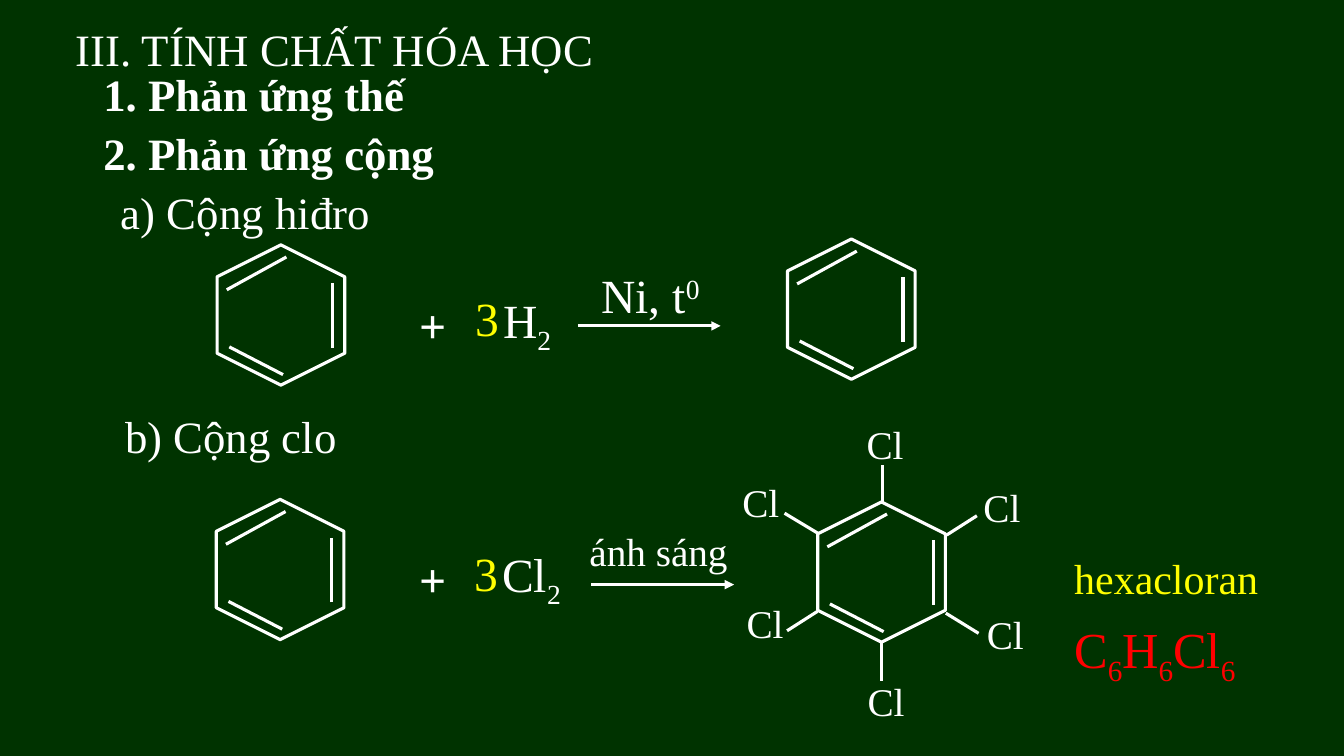
"""Build a slide on the addition reactions of benzene."""
from lxml import etree
from pptx import Presentation, util as u
from pptx.dml.color import RGBColor
from pptx.enum import shapes, text
from pptx.oxml import ns

GREEN = RGBColor(0x00, 0x33, 0x00)
WHITE = RGBColor(0xFF, 0xFF, 0xFF)
YELLOW = RGBColor(0xFF, 0xFF, 0x00)
RED = RGBColor(0xFF, 0x00, 0x00)
FONT = "Times New Roman"

prs = Presentation()
prs.slide_width, prs.slide_height = u.Inches(13.333), u.Inches(7.5)
CELL = prs.slide_width / 160
s = prs.slides.add_slide(prs.slide_layouts[1])
s.background.fill.solid()
s.background.fill.fore_color.rgb = GREEN


def grid(*cells):
    return [round(n * CELL) for n in cells]


def add_line(x1, y1, x2, y2):
    line = s.shapes.add_connector(shapes.MSO_CONNECTOR.STRAIGHT, *grid(x1, y1, x2, y2))
    line.line.color.rgb = WHITE
    line.line.width = u.Pt(2.25)
    etree.SubElement(line._element.spPr, ns.qn("a:effectLst"))
    return line


title, body = s.shapes.title, s.placeholders[1]
title.left, title.top, title.width, title.height = grid(7.8, -1.2, 66, 9.7)
body.left, body.top, body.width, body.height = grid(11.1, 7.3, 110, 22)
title.text_frame.text = "III. TÍNH CHẤT HÓA HỌC"
body.text_frame.text = "1. Phản ứng thế\n2. Phản ứng cộng\na) Cộng hiđro"
for sp in (title, body):
    tf = sp.text_frame
    tf.word_wrap = True
    tf.auto_size = text.MSO_AUTO_SIZE.NONE
    tf.vertical_anchor = text.MSO_ANCHOR.TOP
    for p in tf.paragraphs:
        p.alignment = text.PP_ALIGN.LEFT
        p.font.size, p.font.name, p.font.color.rgb = u.Pt(32), FONT, WHITE
title.text_frame.paragraphs[0].line_spacing = 1.5
for i, p in enumerate(body.text_frame.paragraphs):
    p.space_before = u.Pt(4 if i else 0)
    p.font.bold = i < 2
    pPr = p._p.get_or_add_pPr()
    pPr.set("marL", str(0 if i < 2 else grid(2.1)[0]))
    pPr.set("indent", "0")
    pPr.insert_element_before(etree.Element(ns.qn("a:buNone")), "a:tabLst", "a:defRPr", "a:extLst")

RING_W, RING_H = 16.7, 15.2
DOUBLE_BONDS = [(8.6, 14.7, 2.2, 11.4), (14.5, 11.5, 14.5, 3.8), (1.9, 4.6, 9, 0.7)]
for x, y in [(93, 29.2), (25.1, 29.9), (25, 60.2), (96.6, 60.5)]:
    ring = s.shapes.add_shape(shapes.MSO_SHAPE.HEXAGON, *grid(x, y, RING_W, RING_H))
    ring.rotation = 270
    ring.shadow.inherit = False
    ring.fill.background()
    ring.line.color.rgb = WHITE
    ring.line.width = u.Pt(2.25)
    for x1, y1, x2, y2 in DOUBLE_BONDS:
        add_line(x + x1, y + y1, x + x2, y + y2)

for x, y in [(68.8, 38.8), (70.4, 69.6)]:
    arrow = add_line(x, y, x + 17, y)
    etree.SubElement(arrow.line._get_or_add_ln(), ns.qn("a:tailEnd"), type="triangle")

CHLORINE_BONDS = [
    (105.1, 55.4, 105.1, 60), (116.3, 61.4, 112.7, 63.7), (104.9, 76.4, 104.9, 81.1),
    (97.3, 72.8, 93.7, 75.1), (112.6, 73, 116.5, 75.4), (93.4, 61.1, 97.4, 63.5),
]
for bond in CHLORINE_BONDS:
    add_line(*bond)

SUB, SUPER = "-25000", "30000"
CHLORINES = [(102, 49.4), (115.9, 57), (102.1, 80), (87.7, 70.8), (116.3, 72.1), (87.2, 56.4)]
labels = [
    (48.7, 34.6, 5.6, 34, WHITE, ["+"], SUB),
    (58.7, 34, 15, 34, WHITE, ["H", "2"], SUB),
    (70.4, 31.1, 16.2, 34, WHITE, ["Ni, t", "0"], SUPER),
    (55.4, 33.8, 5.6, 34, YELLOW, ["3"], SUB),
    (13.7, 48.1, 110, 32, WHITE, ["b) Cộng clo"], SUB),
    (48.7, 64.9, 5.6, 34, WHITE, ["+"], SUB),
    (58.6, 64.3, 15, 34, WHITE, ["Cl", "2"], SUB),
    (69, 62.2, 23.3, 28, WHITE, ["ánh sáng"], SUB),
    (55.3, 64.2, 5.6, 34, YELLOW, ["3"], SUB),
    (126.7, 65.2, 32, 30, YELLOW, ["hexacloran"], SUB),
    (126.7, 73, 29, 36, RED, ["C", "6", "H", "6", "Cl", "6"], SUB),
] + [(x, y, 9.6, 28, WHITE, ["Cl"], SUB) for x, y in CHLORINES]
for x, y, width, size, color, pieces, shift in labels:
    tf = s.shapes.add_textbox(*grid(x, y, width, size * 0.2 + 1.2)).text_frame
    tf.word_wrap = True
    for i, piece in enumerate(pieces):
        r = tf.paragraphs[0].add_run()
        r.text = piece
        r.font.size, r.font.name, r.font.color.rgb = u.Pt(size), FONT, color
        if piece == "+":
            r.font.bold = True
        if i % 2:
            r._r.get_or_add_rPr().set("baseline", shift)

prs.save("out.pptx")
